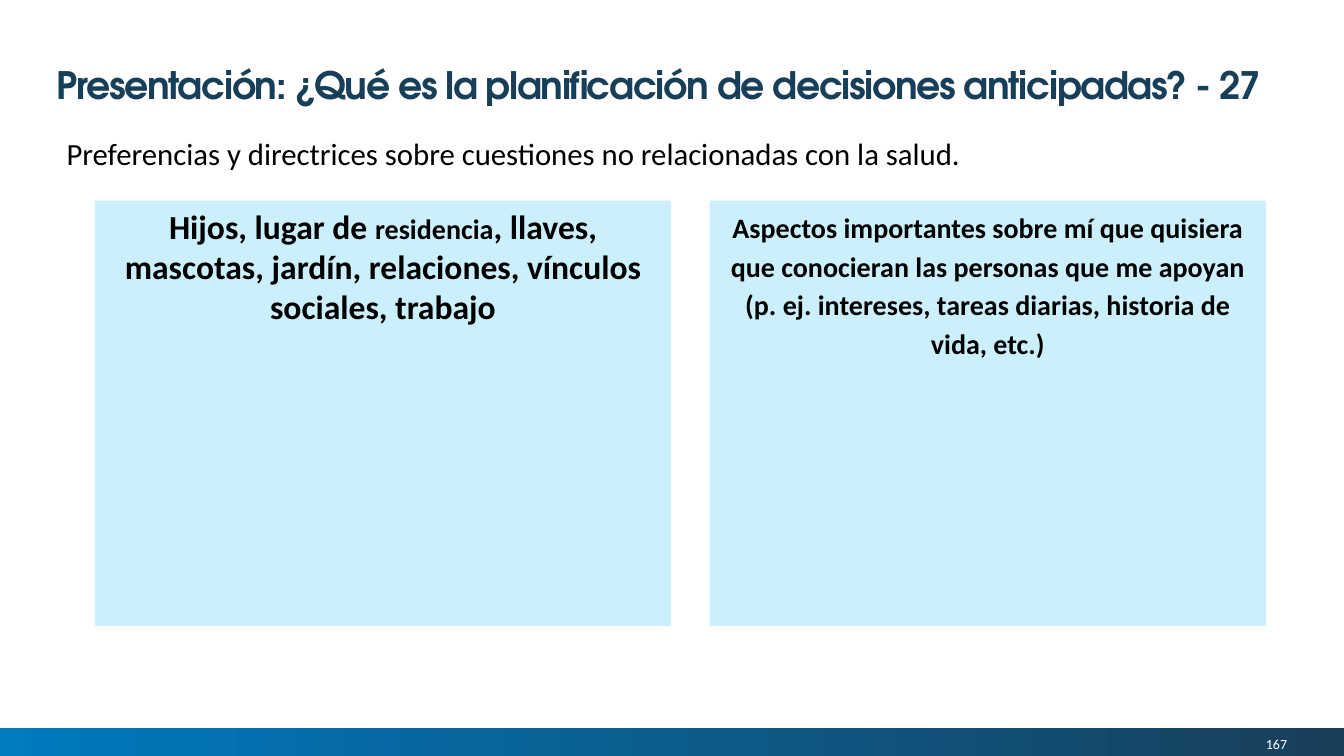
from lxml import etree
from pptx import Presentation
from pptx.dml.color import RGBColor
from pptx.enum import shapes, text
from pptx.oxml import ns
from pptx.util import Pt

NAVY = RGBColor(0x18, 0x3F, 0x5A)
BLUE = RGBColor(0x00, 0x7A, 0xC0)
SKY = RGBColor(0x00, 0xB0, 0xF0)
BLACK = RGBColor(0, 0, 0)
WHITE = RGBColor(255, 255, 255)
HEAD, BODY = "TeX Gyre Adventor", "Calibri"
WIDE, HIGH = 960, 540

TITLE = "Presentación: ¿Qué es la planificación de decisiones anticipadas? - 27"
LEAD = "Preferencias y directrices sobre cuestiones no relacionadas con la salud."
PAGE = "167"
PANELS = [
    (67.7, 411.8, 1.0, [
        ("Hijos, lugar de ", 24),
        ("residencia", 20),
        (", llaves, mascotas, jardín, relaciones, vínculos sociales, trabajo", 24),
    ]),
    (506.9, 397.4, 1.15, [
        ("Aspectos importantes sobre mí que quisiera que conocieran las personas "
         "que me apoyan (p. ej. intereses, tareas diarias, historia de vida, etc.)", 20),
    ]),
]
TOP, TALL = 143.3, 303.8


def place(shape, left, top, width, height):
    shape.left, shape.top = Pt(left), Pt(top)
    shape.width, shape.height = Pt(width), Pt(height)


def style(run, size, color, name=BODY, bold=False):
    font = run.font
    font.name, font.size, font.bold = name, Pt(size), bold
    font.color.rgb = color


def setup(frame, anchor):
    frame.word_wrap = True
    frame.auto_size = text.MSO_AUTO_SIZE.NONE
    frame.vertical_anchor = anchor


def block(slide, left, top, width, height):
    shape = slide.shapes.add_shape(
        shapes.MSO_SHAPE.RECTANGLE, Pt(left), Pt(top), Pt(width), Pt(height))
    shape.shadow.inherit = False
    shape.line.fill.background()
    return shape


def add_title(slide):
    title = slide.shapes.title
    place(title, 33.1, 39.6, 893.5, 31)
    frame = title.text_frame
    frame.text = TITLE
    setup(frame, text.MSO_ANCHOR.TOP)
    para = frame.paragraphs[0]
    para.alignment = text.PP_ALIGN.LEFT
    para.line_spacing = Pt(33)
    run = para.runs[0]
    style(run, 27, NAVY, HEAD, True)
    run.font._element.set("spc", "-100")


def add_lead(slide):
    body = slide.placeholders[1]
    place(body, 40.3, 92.9, 879.8, 354.2)
    frame = body.text_frame
    frame.text = LEAD
    setup(frame, text.MSO_ANCHOR.TOP)
    para = frame.paragraphs[0]
    para.space_before, para.space_after = Pt(0), Pt(12)
    props = para._p.get_or_add_pPr()
    props.set("marL", "0")
    props.set("indent", "0")
    etree.SubElement(props, ns.qn("a:buNone"))
    style(para.runs[0], 22, BLACK)


def add_panel(slide, left, width, pitch, parts):
    panel = block(slide, left, TOP, width, TALL)
    panel.fill.solid()
    panel.fill.fore_color.rgb = SKY
    color = panel.fill._xPr.find(".//" + ns.qn("a:srgbClr"))
    etree.SubElement(color, ns.qn("a:alpha")).set("val", "20000")
    setup(panel.text_frame, text.MSO_ANCHOR.TOP)
    para = panel.text_frame.paragraphs[0]
    para.alignment = text.PP_ALIGN.CENTER
    para.line_spacing = pitch
    for words, size in parts:
        run = para.add_run()
        run.text = words
        style(run, size, BLACK, bold=True)


def add_foot(slide):
    band = block(slide, 0, 520, WIDE, 20)
    band.fill.gradient()
    band.fill.gradient_angle = 0
    for stop, color, spot in zip(band.fill.gradient_stops, (BLUE, NAVY), (0, 1)):
        stop.color.rgb = color
        stop.position = spot
    page = slide.shapes.add_textbox(Pt(789.8), Pt(522.7), Pt(129.6), Pt(17.3))
    frame = page.text_frame
    frame.text = PAGE
    setup(frame, text.MSO_ANCHOR.MIDDLE)
    frame.margin_left = frame.margin_right = 0
    frame.margin_top = frame.margin_bottom = 0
    para = frame.paragraphs[0]
    para.alignment = text.PP_ALIGN.RIGHT
    style(para.runs[0], 10, WHITE)


def main():
    deck = Presentation()
    deck.slide_width, deck.slide_height = Pt(WIDE), Pt(HIGH)
    slide = deck.slides.add_slide(deck.slide_layouts[1])
    add_foot(slide)
    add_lead(slide)
    for panel in PANELS:
        add_panel(slide, *panel)
    add_title(slide)
    deck.save("out.pptx")


if __name__ == "__main__":
    main()
